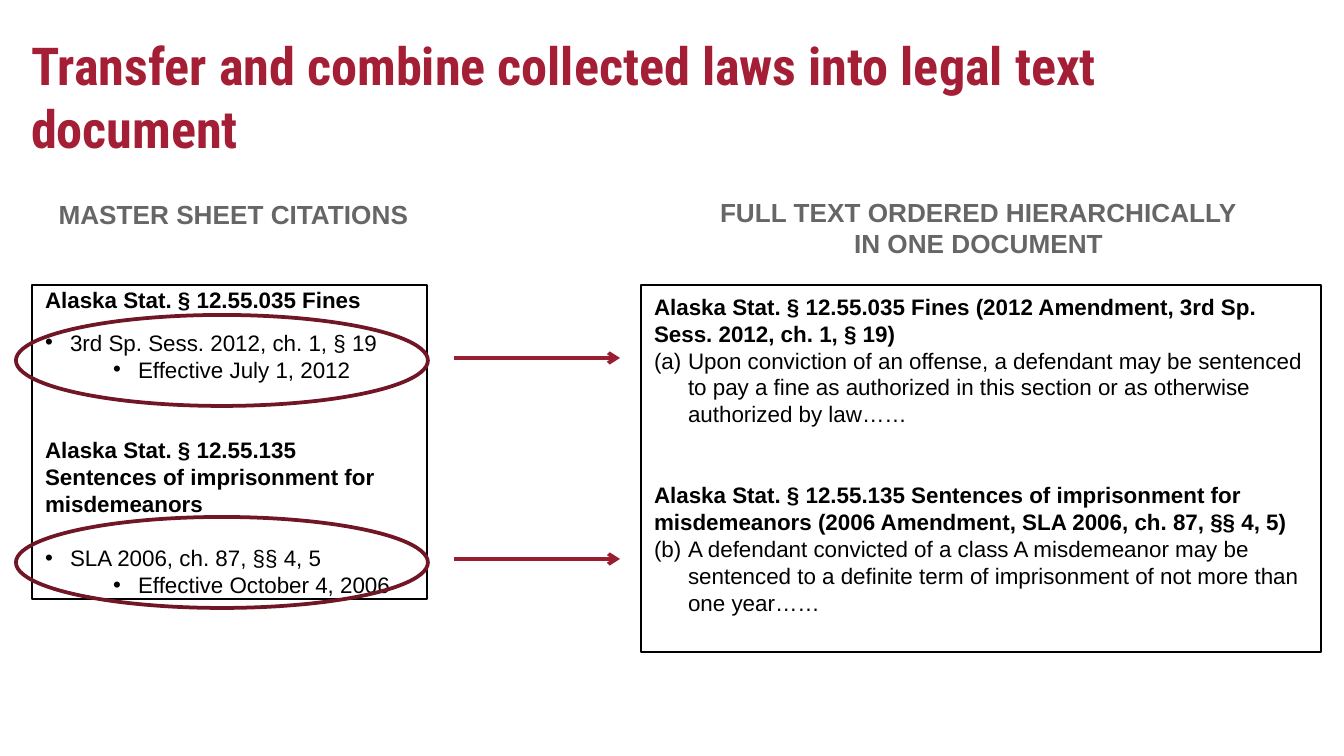
from lxml import etree
from pptx import Presentation
from pptx.dml.color import RGBColor
from pptx.enum.shapes import MSO_CONNECTOR, MSO_SHAPE
from pptx.enum.text import MSO_ANCHOR, MSO_AUTO_SIZE, PP_ALIGN
from pptx.oxml.ns import qn
from pptx.util import Emu, Pt

LEFT, CENTER = PP_ALIGN.LEFT, PP_ALIGN.CENTER
TOP, NO_FIT = MSO_ANCHOR.TOP, MSO_AUTO_SIZE.NONE
RECT, OVAL, STRAIGHT = MSO_SHAPE.RECTANGLE, MSO_SHAPE.OVAL, MSO_CONNECTOR.STRAIGHT

# Content: (text, level, px of space before, list marker)
TITLE = "Transfer and combine collected laws into legal text document"
HEADINGS = [
    (["MASTER SHEET CITATIONS"], (42, 191, 383, 46)),
    (["FULL TEXT ORDERED HIERARCHICALLY", "IN ONE DOCUMENT"], (636, 189, 685, 77)),
]
LINE = 27  # height of one body line
CITATIONS = [
    ("Alaska Stat. § 12.55.035 Fines", "law", 0, None),
    ("3rd Sp. Sess. 2012, ch. 1, § 19", "act", 16, "•"),
    ("Effective July 1, 2012", "date", 0, "•"),
    ("Alaska Stat. § 12.55.135 Sentences of imprisonment for misdemeanors", "law", 2 * LINE, None),
    ("SLA 2006, ch. 87, §§ 4, 5", "act", LINE, "•"),
    ("Effective October 4, 2006", "date", 0, "•"),
]
FULL_TEXT = [
    ("Alaska Stat. § 12.55.035 Fines (2012 Amendment, 3rd Sp. Sess. 2012, ch. 1, § 19)",
     "law", 0, None),
    ("Upon conviction of an offense, a defendant may be sentenced to pay a fine as authorized "
     "in this section or as otherwise authorized by law……", "clause", 0, 1),
    ("Alaska Stat. § 12.55.135 Sentences of imprisonment for misdemeanors "
     "(2006 Amendment, SLA 2006, ch. 87, §§ 4, 5)", "law", 2 * LINE, None),
    ("A defendant convicted of a class A misdemeanor may be sentenced to a definite term of "
     "imprisonment of not more than one year……", "clause", 0, 2),
]
BOXES = [  # paragraphs, place, top inset
    (CITATIONS, (32, 285, 395, 314), 1),
    (FULL_TEXT, (641, 285, 680, 367), 8),
]
INDENTS = {"law": (0, 0), "act": (25, 25), "date": (93, 25), "clause": (34, 34)}  # margin, hang
OVAL_TOPS = [315, 517]
ARROW_LEVELS = [358, 559]


def px(value):
    return Emu(round(value * 914400 / 134.4))


def rgb(code):
    return RGBColor.from_string(code)


def set_frame(frame, top=13):
    settings = {"word_wrap": True, "auto_size": NO_FIT, "vertical_anchor": TOP,
                "margin_left": px(13), "margin_right": px(13),
                "margin_top": px(top), "margin_bottom": 0}
    for name, value in settings.items():
        setattr(frame, name, value)


def write(paragraph, text, size, color, bold=True, font="Arial", align=LEFT):
    paragraph.alignment = align
    run = paragraph.add_run()
    run.text = text
    for name, value in {"size": Pt(size), "bold": bold, "name": font}.items():
        setattr(run.font, name, value)
    run.font.color.rgb = rgb(color)


def set_marker(paragraph, level, marker):
    margin, hang = INDENTS[level]
    props = paragraph._p.get_or_add_pPr()
    props.set("marL", str(px(margin)))
    props.set("indent", str(-px(hang)))
    if marker == "•":
        etree.SubElement(props, qn("a:buFont"), typeface="Arial")
        etree.SubElement(props, qn("a:buChar"), char=marker)
    elif marker:
        etree.SubElement(props, qn("a:buAutoNum"), type="alphaLcParenBoth", startAt=str(marker))


def add_outline(kind, place, color, width):
    shape = slide.shapes.add_shape(kind, *map(px, place))
    shape.shadow.inherit = False
    shape.fill.background()
    shape.line.color.rgb = rgb(color)
    shape.line.width = Pt(width)
    return shape


prs = Presentation()
prs.slide_width, prs.slide_height = px(1344), px(756)
slide = prs.slides.add_slide(prs.slide_layouts[5])

# Title
title = slide.shapes.title
title.left, title.top, title.width, title.height = map(px, (18, 20, 1231, 85))
set_frame(title.text_frame)
write(title.text_frame.paragraphs[0], TITLE, 28, "A41E35", font="Roboto Condensed")

# Law boxes
for laws, place, inset in BOXES:
    frame = add_outline(RECT, place, "000000", 0.75).text_frame
    set_frame(frame, inset)
    for i, (text, level, gap, marker) in enumerate(laws):
        paragraph = frame.add_paragraph() if i else frame.paragraphs[0]
        paragraph.space_before = px(gap)
        set_marker(paragraph, level, marker)
        write(paragraph, text, 12, "000000", bold=level == "law")

# Rings around the collected citations
for top in OVAL_TOPS:
    add_outline(OVAL, (16, top, 412, 91), "701625", 2)

# Column headings
for lines, place in HEADINGS:
    frame = slide.shapes.add_textbox(*map(px, place)).text_frame
    set_frame(frame, 7)
    for i, text in enumerate(lines):
        paragraph = frame.add_paragraph() if i else frame.paragraphs[0]
        write(paragraph, text, 14, "666666", align=CENTER)

# Arrows from citation to full text
for level in ARROW_LEVELS:
    arrow = slide.shapes.add_connector(STRAIGHT, *map(px, (454, level, 620, level)))
    arrow.line.color.rgb = rgb("981E32")
    arrow.line.width = Pt(2)
    etree.SubElement(arrow.line._get_or_add_ln(), qn("a:tailEnd"), type="arrow")
    etree.SubElement(arrow._element.spPr, qn("a:effectLst"))

prs.save("out.pptx")
